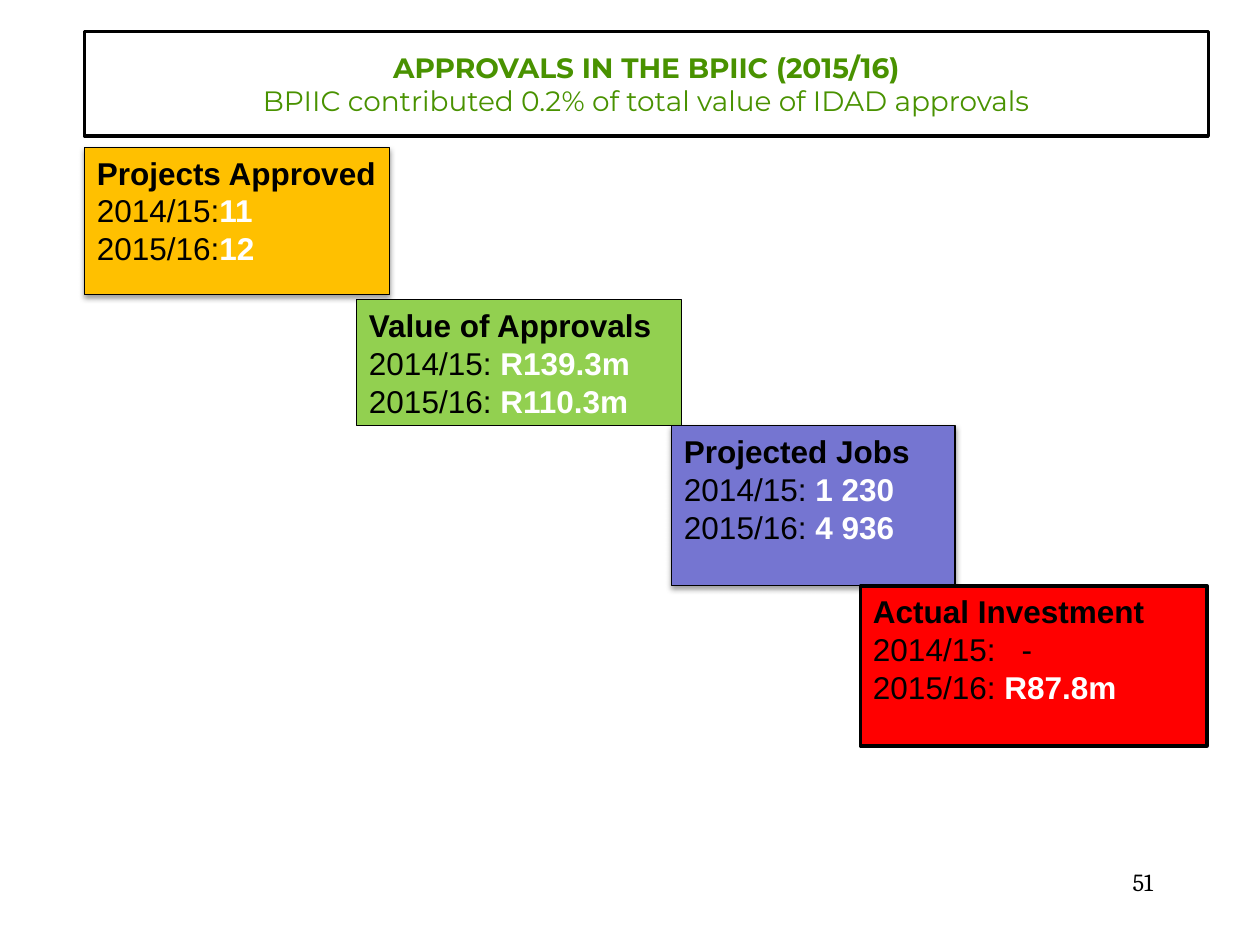
from dataclasses import dataclass

from lxml.etree import SubElement as Sub
from pptx import Presentation
from pptx.dml.color import RGBColor as Rgb
from pptx.enum.shapes import MSO_SHAPE as Geo
from pptx.enum.text import MSO_ANCHOR as Anchor, PP_ALIGN as Align
from pptx.oxml.ns import qn
from pptx.util import Inches, Pt

BLACK, WHITE, GREEN = "000000", "FFFFFF", "499200"


@dataclass
class Card:
    left: float
    top: float
    width: float
    height: float
    fill: str
    head: str
    old: str
    new: str
    gap: str = " "
    line: float = 0.75
    shade: bool = False
    tab: float = 0


CARDS = [
    Card(0.67, 1.17, 2.42, 1.17, "FFC000", "Projects Approved",
         "11", "12", gap="", shade=True),
    Card(2.83, 2.38, 2.58, 1, "92D050", "Value of Approvals",
         "R139.3m", "R110.3m"),
    Card(5.33, 3.38, 2.25, 1.27, "7575D1", "Projected Jobs",
         "1 230", "4 936", shade=True),
    Card(6.83, 4.65, 2.75, 1.27, "FF0000", "Actual Investment",
         "-", "R87.8m", line=2, tab=1.18),
]


def tint(code: str) -> Rgb:
    return Rgb.from_string(code)


def style(font, name: str, size: float, code: str) -> None:
    font.name = name
    font.size = Pt(size)
    font.color.rgb = tint(code)


def add_run(para, text: str, bold: bool = False, code: str = ""):
    run = para.add_run()
    run.text = text
    run.font.bold = bold
    if code:
        run.font.color.rgb = tint(code)


def add_shade(shape) -> None:
    glow = Sub(shape._element.spPr.find(qn("a:effectLst")), qn("a:outerShdw"),
               blurRad=str(Pt(3.1)), dist=str(Pt(1.6)), dir="5400000",
               rotWithShape="0")
    Sub(Sub(glow, qn("a:srgbClr"), val=BLACK), qn("a:alpha"), val="38000")


def add_tab(para, place: float) -> None:
    tabs = Sub(para._p.get_or_add_pPr(), qn("a:tabLst"))
    Sub(tabs, qn("a:tab"), pos=str(Inches(place)), algn="l")


def add_box(slide, left: float, top: float, width: float, height: float):
    box = slide.shapes.add_textbox(
        Inches(left), Inches(top), Inches(width), Inches(height))
    box.text_frame.word_wrap = True
    return box


def add_title(slide) -> None:
    box = add_box(slide, 0.67, 0.25, 8.92, 0.83)
    box.line.color.rgb = tint(BLACK)
    box.line.width = Pt(2)
    box.text_frame.vertical_anchor = Anchor.MIDDLE
    para = box.text_frame.paragraphs[0]
    para.alignment = Align.CENTER
    style(para.font, "Montserrat", 16, GREEN)
    add_run(para, "APPROVALS IN THE BPIIC (2015/16)", True)
    para.add_line_break()
    add_run(para, "BPIIC contributed 0.2% of total value of IDAD approvals")


def add_page(slide) -> None:
    para = add_box(slide, 7.17, 6.83, 2.08, 0.5).text_frame.paragraphs[0]
    para.alignment = Align.RIGHT
    style(para.font, "Cambria", 14, BLACK)
    add_run(para, "51")


def add_card(slide, card: Card) -> None:
    shape = slide.shapes.add_shape(
        Geo.RECTANGLE, Inches(card.left), Inches(card.top),
        Inches(card.width), Inches(card.height))
    shape.shadow.inherit = False
    shape.fill.solid()
    shape.fill.fore_color.rgb = tint(card.fill)
    shape.line.color.rgb = tint(BLACK)
    shape.line.width = Pt(card.line)
    if card.shade:
        add_shade(shape)
    frame = shape.text_frame
    frame.word_wrap = True
    frame.vertical_anchor = Anchor.TOP
    head, old, new = (
        frame.paragraphs[0], frame.add_paragraph(), frame.add_paragraph())
    if card.tab:
        add_tab(old, card.tab)
    for para in (head, old, new):
        para.alignment = Align.LEFT
        style(para.font, "Arial", 18, BLACK)
    add_run(head, card.head, True)
    add_run(old, "2014/15:" + ("\t" if card.tab else card.gap))
    add_run(old, card.old, not card.tab, BLACK if card.tab else WHITE)
    add_run(new, "2015/16:" + card.gap)
    add_run(new, card.new, True, WHITE)


def main() -> None:
    deck = Presentation()
    deck.slide_width, deck.slide_height = Inches(10), Inches(7.5)
    slide = deck.slides.add_slide(deck.slide_layouts[6])
    add_title(slide)
    add_page(slide)
    for card in CARDS:
        add_card(slide, card)
    deck.save("out.pptx")


if __name__ == "__main__":
    main()
